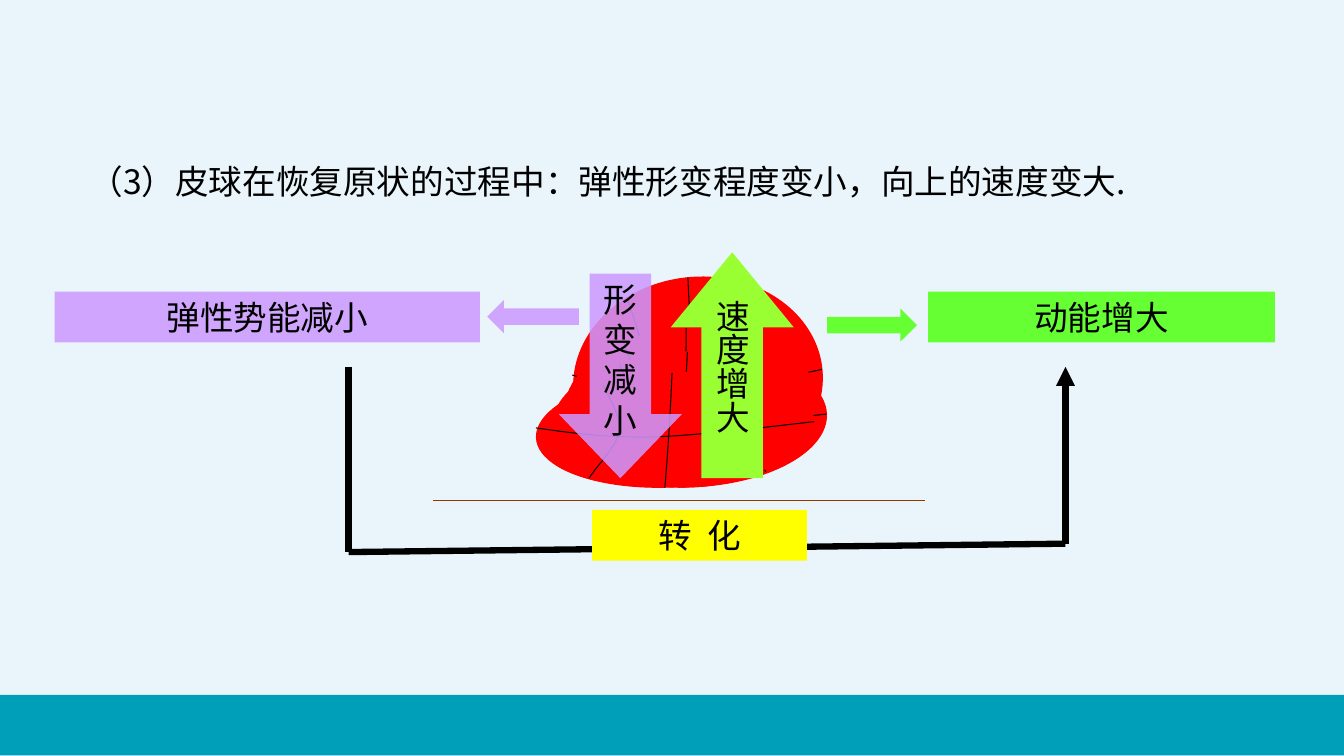
from math import cos, radians, sin

from lxml import etree
from pptx import Presentation
from pptx import util as u
from pptx.dml.color import RGBColor
from pptx.enum import shapes, text
from pptx.oxml.ns import qn

CELL = u.Inches(0.1)
COLS, ROWS = 133.33, 75
BLEED = 0.3
FONT = "Noto Sans CJK SC"
COLORS = {
    "sky": "EAF5FB", "footer": "009FB9", "ball": "FF0000", "ink": "000000",
    "ground": "993300", "kinetic": "66FF33", "speed": "99FF33",
    "elastic": "CC99FF", "convert": "FFFF00",
}
SHAPE = shapes.MSO_SHAPE
MIDDLE = text.MSO_ANCHOR.MIDDLE
BALLS = [
    ((56.9, 27.5, 24.7, 20.7), -5.6),
    ((56, 32.5, 25.1, 15.8), -3.5),
    ((54.9, 34.9, 27.1, 13.4), -2.2),
    ((53.2, 37, 27.6, 11.3), -3.4),
]
SEAMS = [
    [(.25, .07), (.26, .13), (.31, .36), (.3, .49), (.28, .63), (.2, .8), (.18, .88)],
    [(.73, .04), (.72, .12), (.67, .35), (.67, .49), (.68, .64), (.75, .82), (.77, .91)],
    [(0, .41), (.12, .47), (.24, .53), (.41, .55), (.57, .56), (.78, .53), (1, .5)],
    [(.5, 0), (.5, 0), (.48, .5), (.45, 1)],
]


def rgb(name):
    """Return the named colour."""
    return RGBColor.from_string(COLORS[name])


def cells(*values):
    """Turn grid columns or rows into lengths."""
    return [round(v * CELL) for v in values]


def apply(target, formats):
    """Set every attribute named in a dict of format values."""
    for name, value in formats.items():
        setattr(target, name, value)


def write(sp, words, align=text.PP_ALIGN.CENTER, spacing=None, tracking=0, **frame):
    """Write one formatted paragraph into a shape."""
    tf = sp.text_frame
    apply(tf, {"word_wrap": True, **frame})
    p = tf.paragraphs[0]
    apply(p, {"alignment": align, "line_spacing": spacing})
    r = p.add_run()
    r.text = words
    apply(r.font, {"name": FONT, "size": u.Pt(24)})
    r.font.color.rgb = rgb("ink")
    rpr = r.font._element
    etree.SubElement(rpr, qn("a:ea")).set("typeface", FONT)
    if tracking:
        rpr.set("spc", str(tracking))


def stroke(sp, color, width=0.75):
    """Set the colour and width of an outline."""
    sp.line.color.rgb = rgb(color)
    sp.line.width = u.Pt(width)


def preset(s, kind, box, color, alpha=None, adjust=(), turn=0):
    """Add a flat preset shape without an outline."""
    sp = s.shapes.add_shape(kind, *cells(*box))
    sp.shadow.inherit = False
    sp.rotation = turn
    for i, value in enumerate(adjust):
        sp.adjustments[i] = value
    sp.fill.solid()
    sp.fill.fore_color.rgb = rgb(color)
    if alpha:
        clr = sp._element.spPr.find(".//" + qn("a:srgbClr"))
        etree.SubElement(clr, qn("a:alpha")).set("val", str(alpha * 1000))
    sp.line.fill.background()
    return sp


def line(s, start, end, color, width, arrow=False):
    """Add a straight line, with an arrowhead at its end on request."""
    sp = s.shapes.add_connector(shapes.MSO_CONNECTOR.STRAIGHT, *cells(*start, *end))
    stroke(sp, color, width)
    sppr = sp._element.spPr
    if arrow:
        etree.SubElement(sppr.find(qn("a:ln")), qn("a:tailEnd")).set("type", "triangle")
    etree.SubElement(sppr, qn("a:effectLst"))


def curve(s, points):
    """Add an open chain of cubic curves through its control points."""
    path = [cells(*pt) for pt in points]
    fb = s.shapes.build_freeform(*path[0])
    fb.add_line_segments(path[1:], close=False)
    sp = fb.convert_to_shape()
    sp.shadow.inherit = False
    sp.fill.background()
    stroke(sp, "ink")
    outline = sp._element.spPr.find(".//" + qn("a:path"))
    segments = outline.findall(qn("a:lnTo"))
    for i in range(0, len(segments), 3):
        cubic = etree.SubElement(outline, qn("a:cubicBezTo"))
        for segment in segments[i:i + 3]:
            cubic.append(segment[0])
            outline.remove(segment)
    return sp


def ball(s, box, turn):
    """Add a squashed ball and its four seams, all turned about its centre."""
    stroke(preset(s, SHAPE.OVAL, box, "ball", turn=turn), "ball")
    left, top, width, height = box
    cx, cy = cells(left + width / 2, top + height / 2)
    c, d = cos(radians(turn)), sin(radians(turn))
    for seam in SEAMS:
        sp = curve(s, [(left + x * width, top + y * height) for x, y in seam])
        dx, dy = sp.left + sp.width / 2 - cx, sp.top + sp.height / 2 - cy
        apply(sp, {
            "rotation": turn,
            "left": round(cx + dx * c - dy * d - sp.width / 2),
            "top": round(cy + dx * d + dy * c - sp.height / 2),
        })


def label(s, words, box, color, alpha=None, tracking=0):
    """Add a coloured label box."""
    sp = preset(s, SHAPE.RECTANGLE, box, color, alpha)
    write(sp, words, tracking=tracking, vertical_anchor=MIDDLE)


def main():
    """Build the slide of the ball regaining its shape."""
    prs = Presentation()
    prs.slide_width, prs.slide_height = cells(COLS, ROWS)
    s = prs.slides.add_slide(prs.slide_layouts[6])
    for color, top, height in (("sky", 0, ROWS), ("footer", 68.94, 6)):
        preset(s, SHAPE.RECTANGLE, (-BLEED, top, COLS + 2 * BLEED, height), color)
    for box, turn in BALLS:
        ball(s, box, turn)

    question = s.shapes.add_textbox(*cells(7.9, 13.5, 123, 6.3))
    write(question, "（3）皮球在恢复原状的过程中：弹性形变程度变小，向上的速度变大.",
          align=text.PP_ALIGN.LEFT, spacing=1.5)
    line(s, (42.94, 49.63), (91.8, 49.63), "ground", 0.75)
    label(s, "动能增大", (92.08, 28.94, 34.4, 5.04), "kinetic")
    label(s, "弹性势能减小", (5.42, 28.94, 42.2, 5.04), "elastic", 86)

    corners = [(34.58, 36.4), (34.58, 54.77), (105.7, 53.94), (105.7, 36.4)]
    for i, (start, end) in enumerate(zip(corners, corners[1:])):
        line(s, start, end, "ink", 4.5, arrow=i == 2)
    label(s, "转 化", (58.75, 50.6, 21.3, 5.04), "convert", tracking=270)

    shrink = preset(s, SHAPE.DOWN_ARROW, (55.44, 27.14, 12.2, 20.3), "elastic", 86, (.5, .52))
    write(shrink, "形变减小", vertical_anchor=text.MSO_ANCHOR.TOP)
    preset(s, SHAPE.LEFT_ARROW, (48.34, 29.77, 9.1, 3.3), "elastic", 86)
    speed = preset(s, SHAPE.UP_ARROW, (66.54, 25.03, 12.2, 22.4), "speed", adjust=(.5, .61))
    write(speed, "速度增大", word_wrap=False, vertical_anchor=MIDDLE)
    speed.text_frame._txBody.bodyPr.set("vert", "eaVert")
    preset(s, SHAPE.LEFT_ARROW, (82.06, 30.6, 8.9, 3.3), "kinetic", turn=180)
    prs.save("out.pptx")


if __name__ == "__main__":
    main()
